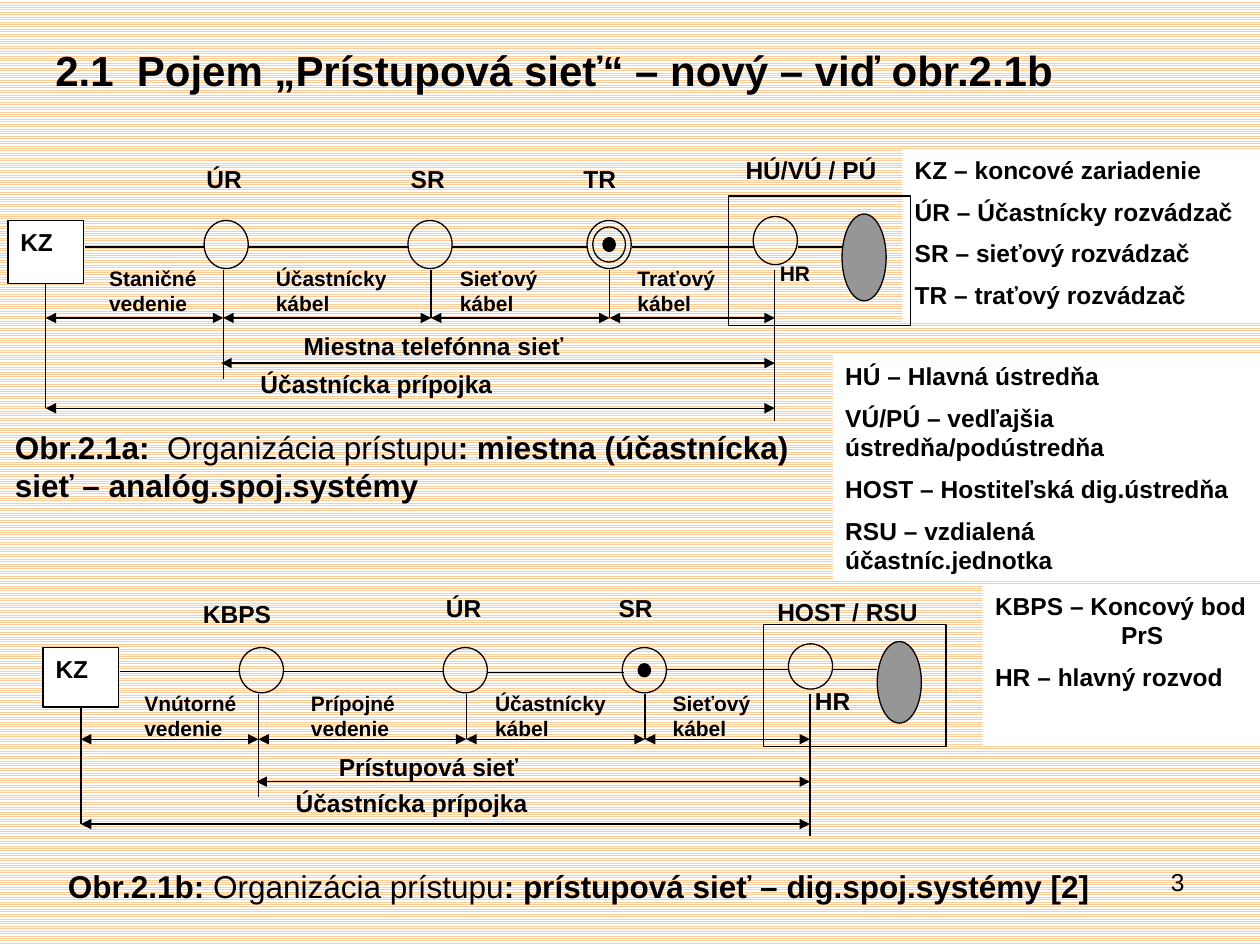
from itertools import pairwise

from lxml.etree import SubElement
from pptx import Presentation
from pptx.dml.color import RGBColor
from pptx.enum.dml import MSO_PATTERN
from pptx.enum.shapes import MSO_CONNECTOR, MSO_SHAPE
from pptx.enum.text import MSO_ANCHOR, MSO_AUTO_SIZE, PP_ALIGN
from pptx.oxml.ns import qn
from pptx.util import Cm, Pt

BLACK = RGBColor(0x00, 0x00, 0x00)
WHITE = RGBColor(0xFF, 0xFF, 0xFF)
GREY = RGBColor(0x96, 0x96, 0x96)
PEACH = RGBColor(0xFF, 0xCC, 0x99)
RECT, OVAL = MSO_SHAPE.RECTANGLE, MSO_SHAPE.OVAL

prs = Presentation()
prs.slide_width, prs.slide_height = Cm(25.4), Cm(19.05)
s = prs.slides.add_slide(prs.slide_layouts[5])
bg = s.background.fill
bg.patterned()
bg.pattern = MSO_PATTERN.LIGHT_HORIZONTAL
bg.fore_color.rgb, bg.back_color.rgb = PEACH, WHITE


def put(text, x, y, w, h, kind=None, fill=None, outline=False, size=14,
        bold=True, gap=0, align=PP_ALIGN.LEFT):
    box = Cm(x), Cm(y), Cm(w), Cm(h)
    if kind == "title":
        sp = s.shapes.title
        sp.left, sp.top, sp.width, sp.height = box
    elif kind is None:
        sp = s.shapes.add_textbox(*box)
    else:
        sp = s.shapes.add_shape(kind, *box)
        sp.shadow.inherit = False
        if fill is None:
            sp.fill.background()
        else:
            sp.fill.solid()
            sp.fill.fore_color.rgb = fill
        if outline:
            sp.line.color.rgb = BLACK
            sp.line.width = Pt(0.75)
        else:
            sp.line.fill.background()
    if not text:
        return sp
    tf = sp.text_frame
    tf.word_wrap = True
    tf.auto_size = MSO_AUTO_SIZE.NONE
    tf.vertical_anchor = MSO_ANCHOR.TOP
    for i, row in enumerate(text.split("\n")):
        p = tf.add_paragraph() if i else tf.paragraphs[0]
        p.alignment = align
        p.space_before = Pt(gap if i else 0)
        if "\t" in row:
            tabs = SubElement(p._p.get_or_add_pPr(), qn("a:tabLst"))
            SubElement(tabs, qn("a:tab"), pos=str(Cm(2.54)), algn="l")
        for j, part in enumerate(row.split("|")):
            r = p.add_run()
            r.text = part
            r.font.name, r.font.size = "Arial", Pt(size)
            r.font.bold = bold and j % 2 == 0
            r.font.color.rgb = BLACK
    return sp


def line(x1, y1, x2, y2, arrows=False):
    c = s.shapes.add_connector(MSO_CONNECTOR.STRAIGHT, Cm(x1), Cm(y1), Cm(x2), Cm(y2))
    c.line.color.rgb = BLACK
    c.line.width = Pt(0.75)
    if arrows:
        ln = c.line._get_or_add_ln()
        for end in ("a:headEnd", "a:tailEnd"):
            SubElement(ln, qn(end), type="triangle")
    SubElement(c._element.spPr, qn("a:effectLst"))
    return c


put("2.1  Pojem „Prístupová sieť“ – nový – viď obr.2.1b", 0.86, 0.76, 23.19, 1.27,
    kind="title", size=24)
put("3", 18.21, 17.35, 5.92, 1.32, bold=False, align=PP_ALIGN.RIGHT)

legends = [
    ("HÚ – Hlavná ústredňa\nVÚ/PÚ – vedľajšia ústredňa/podústredňa\n"
     "HOST – Hostiteľská dig.ústredňa\nRSU – vzdialená účastníc.jednotka",
     16.79, 7.16, 8.61, 4.55),
    ("KZ – koncové zariadenie\nÚR – Účastnícky rozvádzač\n"
     "SR – sieťový rozvádzač\nTR – traťový rozvádzač", 18.19, 3, 7.21, 3.51),
    ("KBPS – Koncový bod \tPrS\nHR – hlavný rozvod", 19.81, 11.79, 5.59, 3.25),
]
for legend in legends:
    put(*legend, kind=RECT, fill=WHITE, gap=7)

captions = [
    ("Obr.2.1a:  |Organizácia prístupu|: miestna (účastnícka) sieť – analóg.spoj.systémy",
     0.05, 8.51, 17.27, 1.78),
    ("Obr.2.1b: |Organizácia prístupu|: prístupová sieť – dig.spoj.systémy [2]",
     1.12, 17.35, 21.87, 1.02),
]
for caption in captions:
    put(*caption, size=18)

NODES = [4.56, 8.67, 12.28, 15.63]
STEMS = [(0.92, 3.78), (4.5, 3.2), (8.69, 1.96), (12.29, 1.96), (15.62, 4.04)]
WIRES = [(1.72, 4.11), (5, 8.24), (9.12, 11.86), (12.74, 15.19), (16.08, 16.97)]
CABLE_X = [1.95, 5.31, 9.02, 12.6]

diagrams = [
    dict(dx=0, top=4.45, k=1, ring=True, hr_size=12, wire_y=[4.98] * 5,
         nodes=[("ÚR", 3.91, 3.18), ("SR", 8.03, 3.18), ("TR", 11.51, 3.18),
                ("HÚ/VÚ / PÚ", 14.78, 3)],
         cables=["Staničné vedenie", "Účastnícky kábel", "Sieťový kábel", "Traťový kábel"],
         network="Miestna telefónna sieť"),
    dict(dx=0.71, top=13.06, k=0.94, ring=False, hr_size=14,
         wire_y=[13.54, 13.54, 13.56, 13.49, 13.49],
         nodes=[("KBPS", 3.84, 11.96), ("ÚR", 8.74, 11.84), ("SR", 12.22, 11.84),
                ("HOST / RSU", 15.42, 11.91)],
         cables=["Vnútorné vedenie", "Prípojné vedenie", "Účastnícky kábel", "Sieťový kábel"],
         network="Prístupová sieť"),
]
for d in diagrams:
    dx, top, k = d["dx"], d["top"], d["k"]
    kz = put("KZ", 0.16 + dx, top, 1.52, 1.27 * k, kind=RECT, fill=WHITE, outline=True)
    for name, x, y in d["nodes"]:
        put(name, x, y, 3.89 if len(name) > 4 else 2.51, 1.2)

    ovals = [(x, 0.48, 0.89, 0.97, None) for x in NODES[:3]]
    ovals += [(NODES[3], 0.4, 0.89, 0.97, None), (17.42, 0.74, 0.89, 1.75, GREY),
              (NODES[2], 0.48, 0.25, 0.28, BLACK)]
    if d["ring"]:
        ovals.append((NODES[2], 0.48, 0.66, 0.71, None))
    for cx, cy, w, h, fill in ovals:
        put("", cx - w / 2 + dx, top + (cy - h / 2) * k, w, h * k,
            kind=OVAL, fill=fill, outline=True)

    for i, (x, bottom) in enumerate(STEMS):
        stem = line(x + dx, top + (0.99 if i else 1.27) * k, x + dx, top + bottom * k)
        if i == 0:
            stem.begin_connect(kz, 2)
    spans = [(a[0], b[0], 1.96) for a, b in pairwise(STEMS)]
    spans += [(4.46, 15.62, 2.87), (0.92, 15.62, 3.78)]
    for x1, x2, y in spans:
        line(x1 + dx, top + y * k, x2 + dx, top + y * k, arrows=True)
    for (x1, x2), y in zip(WIRES, d["wire_y"]):
        line(x1 + dx, y, x2 + dx, y)

    for cable, x in zip(d["cables"], CABLE_X):
        put(cable, x + dx, top + 0.78 * k, 2.82, 1.2 * k, size=12)
    put(d["network"], 5.87 + dx, top + 2.1 * k, 9.32, 1.2 * k)
    put("Účastnícka prípojka", 5 + dx, top + 2.87 * k, 9.7, 1.2 * k)
    put("", 14.68 + dx, top - 0.5 * k, 3.68, 2.62 * k, kind=RECT, outline=True)
    put("HR", 15.47 + dx, top + 0.68 * k, 1.5, 1.27 * k, size=d["hr_size"])

prs.save("out.pptx")
